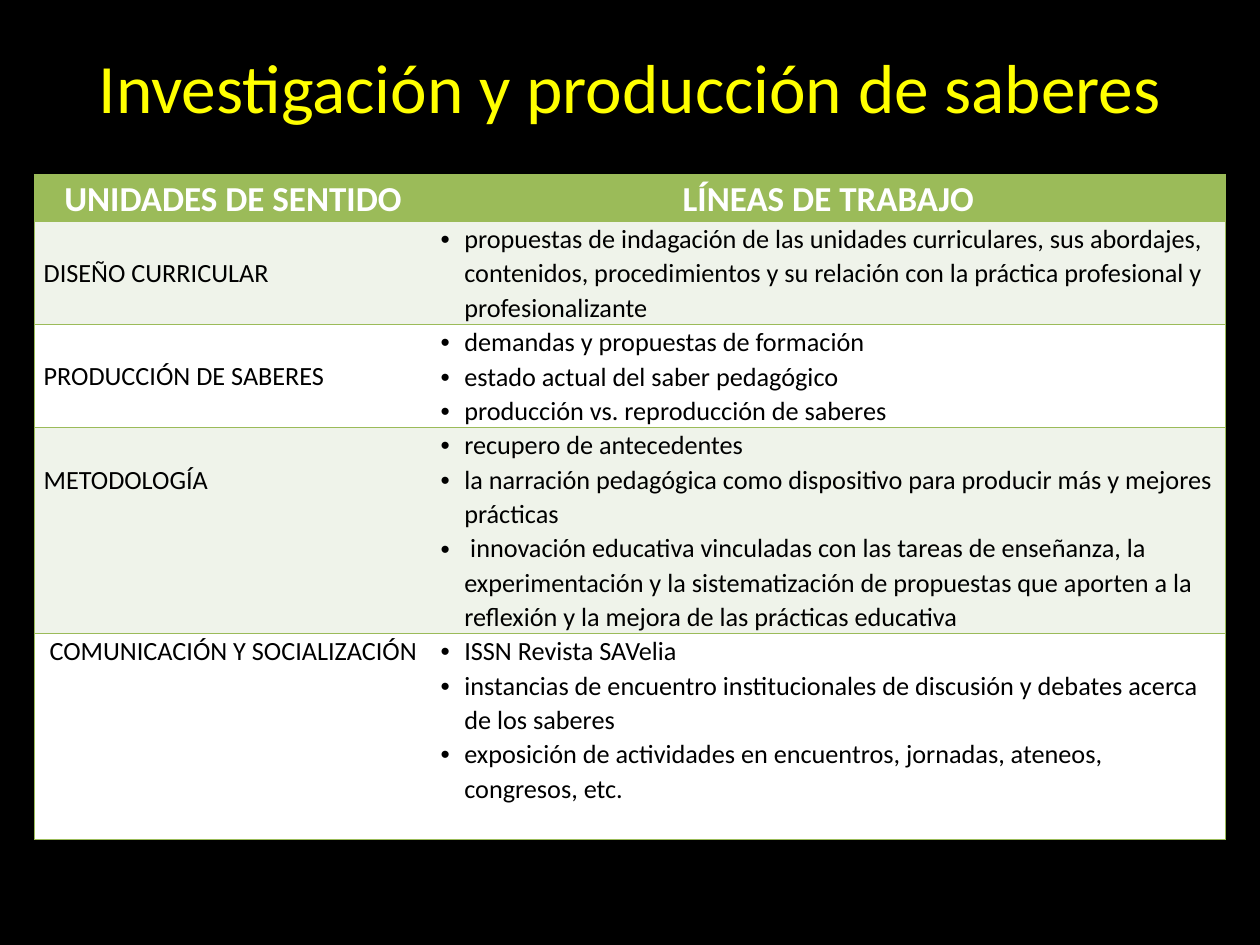
from lxml import etree
from pptx import Presentation
from pptx.dml import color
from pptx.enum import text
from pptx.oxml import ns
from pptx.util import Cm, Pt

GREEN, PALE, WHITE, BLACK, YELLOW = "9BBB59", "EFF3EA", "FFFFFF", "000000", "FFFF00"
LINE = 0.69
HEADS = ["UNIDADES DE SENTIDO", "LÍNEAS DE TRABAJO"]
ROWS = [
    ("DISEÑO CURRICULAR", LINE, 2.08, [
        "propuestas de indagación de las unidades curriculares, sus abordajes, contenidos, "
        "procedimientos y su relación con la práctica profesional y profesionalizante"]),
    ("PRODUCCIÓN DE SABERES", LINE, 2.08, [
        "demandas y propuestas de formación",
        "estado actual del saber pedagógico",
        "producción vs. reproducción de saberes"]),
    ("METODOLOGÍA", LINE, 4.15, [
        "recupero de antecedentes",
        "la narración pedagógica como dispositivo para producir más y mejores prácticas",
        " innovación educativa vinculadas con las tareas de enseñanza, la experimentación y la "
        "sistematización de propuestas que aporten a la reflexión y la mejora de las prácticas educativa"]),
    (" COMUNICACIÓN Y SOCIALIZACIÓN", 0, 4.15, [
        "ISSN Revista SAVelia",
        "instancias de encuentro institucionales de discusión y debates acerca de los saberes",
        "exposición de actividades en encuentros, jornadas, ateneos, congresos, etc."]),
]
HEAD = {"size": Pt(20), "bold": True, "name": "Calibri"}
BODY = {"size": Pt(15), "bold": False, "name": "Calibri"}


def paint(part, tone):
    part.solid()
    part.fore_color.rgb = color.RGBColor.from_string(tone)


def apply(thing, style):
    for key, value in style.items():
        setattr(thing, key, value)


def write(frame, lines, font, tone, style):
    for i, line in enumerate(lines):
        para = frame.add_paragraph() if i else frame.paragraphs[0]
        apply(para, style)
        run = para.add_run()
        run.text = line
        apply(run.font, font)
        paint(run.font.fill, tone)


def bullet(para):
    props = para._p.get_or_add_pPr()
    props.set("marL", str(Cm(0.48)))
    props.set("indent", str(-Cm(0.48)))
    etree.SubElement(props, ns.qn("a:buFont")).set("typeface", "Arial")
    etree.SubElement(props, ns.qn("a:buChar")).set("char", "•")


def edge(cell, outer):
    props = cell._tc.get_or_add_tcPr()
    for i, side in enumerate("LRTB"):
        line = etree.Element(ns.qn("a:ln" + side), w=str(Pt(1)))
        if side in outer + "TB":
            fill = etree.SubElement(line, ns.qn("a:solidFill"))
            etree.SubElement(fill, ns.qn("a:srgbClr"), val=GREEN)
        else:
            etree.SubElement(line, ns.qn("a:noFill"))
        props.insert(i, line)


def title(slide, left, top, width, height):
    frame = slide.shapes.add_textbox(left, top, width, height).text_frame
    apply(frame, {"word_wrap": True, "vertical_anchor": text.MSO_ANCHOR.MIDDLE})
    write(frame, ["Investigación y producción de saberes"],
          {"size": Pt(39.6), "name": "Calibri"}, YELLOW,
          {"alignment": text.PP_ALIGN.CENTER})


def fill_cell(cell, lines, font, tone, back, outer, align, top=0):
    apply(cell, {"margin_left": Cm(0.18), "margin_right": Cm(0.18),
                 "margin_top": Cm(top), "margin_bottom": 0})
    paint(cell.fill, back)
    edge(cell, outer)
    write(cell.text_frame, lines, font, tone,
          {"alignment": align, "line_spacing": 1.07})


def table(slide, left, top, width, height):
    grid = slide.shapes.add_table(len(ROWS) + 1, 2, left, top, width, height).table
    grid.columns[0].width = width // 3
    grid.columns[1].width = width - width // 3
    grid.rows[0].height = Cm(0.93)
    for col, head in enumerate(HEADS):
        fill_cell(grid.cell(0, col), [head], HEAD, WHITE, GREEN, "LR"[col],
                  text.PP_ALIGN.CENTER)
    for i, (name, drop, tall, items) in enumerate(ROWS, 1):
        back = PALE if i % 2 else WHITE
        grid.rows[i].height = Cm(tall)
        fill_cell(grid.cell(i, 0), [name], BODY, BLACK, back, "L",
                  text.PP_ALIGN.LEFT, drop)
        cell = grid.cell(i, 1)
        fill_cell(cell, items, BODY, BLACK, back, "R", text.PP_ALIGN.LEFT)
        for para in cell.text_frame.paragraphs:
            bullet(para)


def main():
    deck = Presentation()
    apply(deck, {"slide_width": Cm(25.4), "slide_height": Cm(19.05)})
    slide = deck.slides.add_slide(deck.slide_layouts[6])
    paint(slide.background.fill, BLACK)
    title(slide, Cm(1.27), Cm(0.13), Cm(22.86), Cm(3.18))
    table(slide, Cm(0.7), Cm(3.53), Cm(24), Cm(13.39))
    deck.save("out.pptx")


if __name__ == "__main__":
    main()
